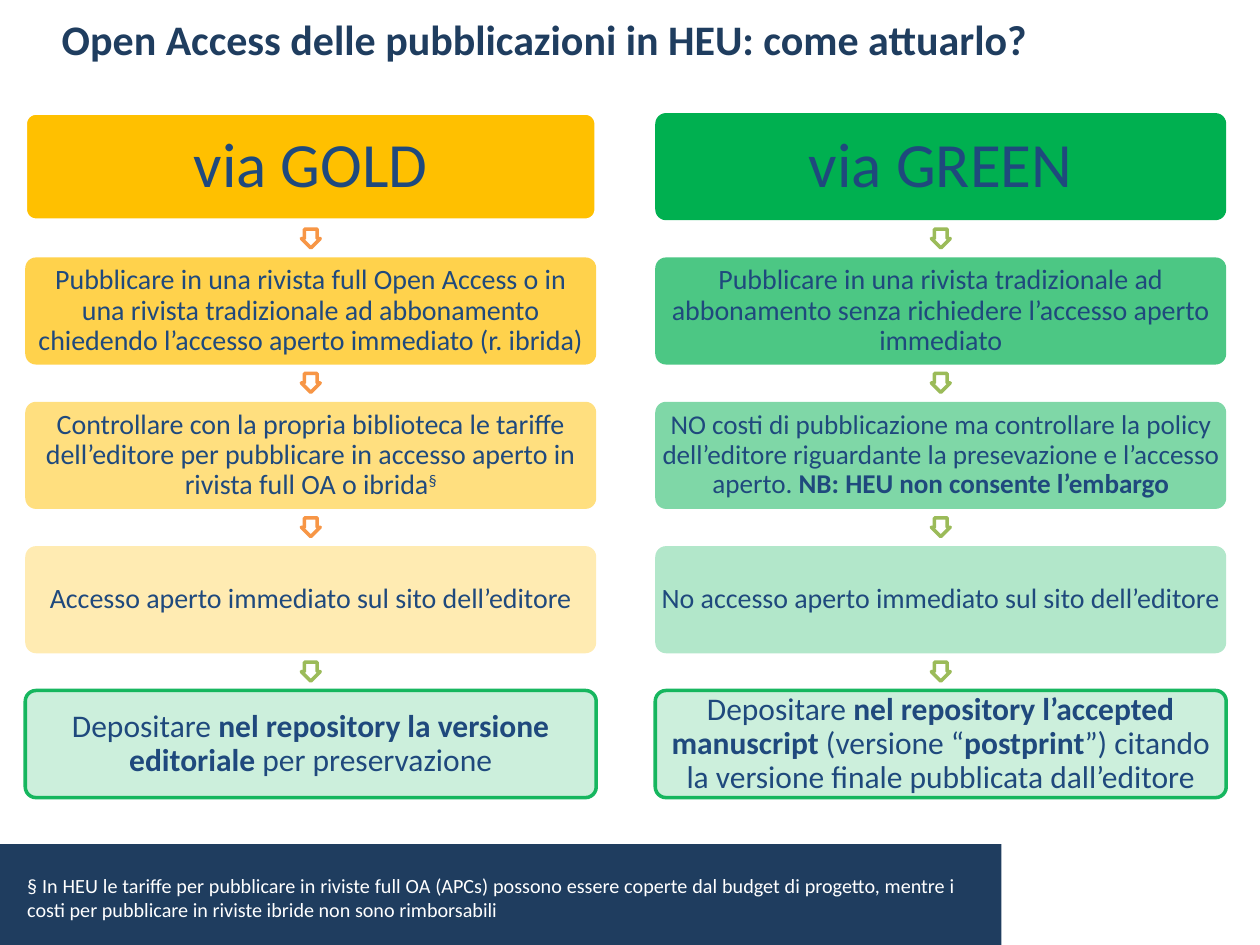
from lxml.etree import SubElement
from pptx import Presentation
from pptx.dml.color import RGBColor
from pptx.enum.shapes import MSO_SHAPE
from pptx.enum.text import MSO_ANCHOR, MSO_AUTO_SIZE, PP_ALIGN
from pptx.oxml.ns import qn
from pptx.util import Cm, Pt

HUES = {"navy": "1F3D5F", "ink": "1F497D", "gold": "FFC000", "green": "00B050",
        "orange": "F79646", "olive": "9BBB59", "white": "FFFFFF"}
TOP, WIDE, HIGH, STEP = 2.28, 11.51, 2.16, 2.91
TIP, DROP = 0.38, 2.34
FADES = [100, 70, 50, 30, 20]
SIDES = ("margin_left", "margin_right", "margin_top", "margin_bottom")

PATHS = [
    {"left": 0.51, "hue": "gold", "edge": "white",
     "tips": ["orange", "orange", "orange", "olive"],
     "steps": [
         (36, [("via GOLD", {})]),
         (16, [("Pubblicare in una rivista full Open Access o in una rivista tradizionale "
                "ad abbonamento chiedendo l’accesso aperto immediato (r. ibrida)", {})]),
         (16, [("Controllare con la propria biblioteca le tariffe dell’editore per "
                "pubblicare in accesso aperto in rivista full OA o ibrida", {}),
               ("§", {"raise": "30000"})]),
         (16, [("Accesso aperto immediato sul sito dell’editore", {})]),
         (18, [("Depositare ", {}),
               ("nel repository la versione editoriale ", {"bold": True}),
               ("per preservazione", {})])]},
    {"left": 13.21, "hue": "green", "edge": None,
     "tips": ["olive"] * 4,
     "steps": [
         (36, [("via GREEN", {})]),
         (16, [("Pubblicare in una rivista tradizionale ad abbonamento senza richiedere "
                "l’accesso aperto immediato", {})]),
         (15.5, [("NO costi di pubblicazione ma controllare la policy dell’editore "
                  "riguardante la presevazione e l’accesso aperto. ", {}),
                 ("NB: HEU non consente l’embargo", {"bold": True})]),
         (16, [("No accesso aperto immediato sul sito dell’editore", {})]),
         (18, [("Depositare ", {}),
               ("nel repository l’accepted manuscript ", {"bold": True}),
               ("(versione “", {}), ("postprint", {"bold": True}),
               ("”) citando la versione finale pubblicata dall’editore", {})])]},
]


def put(item, values):
    for name, value in values.items():
        setattr(item, name, value)


def tint(fill, hue, fade=100):
    fill.solid()
    fill.fore_color.rgb = RGBColor.from_string(HUES[hue])
    if fade < 100:
        color = next(fill._xPr.iter(qn("a:srgbClr")))
        SubElement(color, qn("a:alpha")).set("val", str(fade * 1000))


def trim(shape, hue=None, fade=100):
    if hue is None:
        shape.line.fill.background()
        return
    tint(shape.line.fill, hue, fade)
    shape.line.width = Pt(2)


def draw(slide, kind, area, hue, fade=100):
    shape = slide.shapes.add_shape(kind, *map(Cm, area))
    shape.shadow.inherit = False
    tint(shape.fill, hue, fade)
    return shape


def fill_text(frame, runs, size, hue, look, bold=False):
    para = frame.paragraphs[0]
    put(para, look)
    for text, style in runs:
        run = para.add_run()
        run.text = text
        put(run.font, {"name": "Calibri", "size": Pt(size),
                       "bold": style.get("bold", bold)})
        run.font.color.rgb = RGBColor.from_string(HUES[hue])
        if "raise" in style:
            run.font._element.set("baseline", style["raise"])


def add_title(slide):
    title = slide.shapes.title
    put(title, {"left": Cm(0.99), "top": Cm(0), "width": Cm(23.39), "height": Cm(1.8)})
    put(title.text_frame, {"word_wrap": True, "auto_size": MSO_AUTO_SIZE.NONE,
                           "vertical_anchor": MSO_ANCHOR.MIDDLE})
    runs = [("Open Access delle pubblicazioni in HEU: come attuarlo?", {})]
    fill_text(title.text_frame, runs, 24, "navy",
              {"alignment": PP_ALIGN.LEFT, "line_spacing": Pt(22)}, True)


def add_step(slide, left, top, hue, fade, size, runs):
    box = draw(slide, MSO_SHAPE.ROUNDED_RECTANGLE, (left, top, WIDE, HIGH), hue, fade)
    box.adjustments[0] = 0.1
    frame = box.text_frame
    put(frame, {"word_wrap": True, "vertical_anchor": MSO_ANCHOR.MIDDLE})
    put(frame, dict.fromkeys(SIDES, Cm(0.06)))
    fill_text(frame, runs, size, "ink",
              {"alignment": PP_ALIGN.CENTER, "line_spacing": 0.9})
    return box


def add_tip(slide, left, top, hue):
    area = (left + (WIDE - TIP) / 2, top + DROP, TIP, TIP)
    tip = draw(slide, MSO_SHAPE.RIGHT_ARROW, area, "white")
    tip.rotation = 90
    tip.adjustments[0] = 0.67
    trim(tip, hue)


def add_path(slide, path):
    left, last = path["left"], len(FADES) - 1
    for row, (fade, (size, runs)) in enumerate(zip(FADES, path["steps"])):
        top = TOP + row * STEP
        hue = "green" if row == last else path["hue"]
        box = add_step(slide, left, top, hue, fade, size, runs)
        if row == last:
            trim(box, "green", 90)
        else:
            trim(box, path["edge"] if row == 0 else None)
            add_tip(slide, left, top, path["tips"][row])


def add_note(slide):
    band = draw(slide, MSO_SHAPE.RECTANGLE, (0, 17.02, 20.19, 2.03), "navy")
    trim(band)
    note = slide.shapes.add_textbox(Cm(0.3), Cm(17.48), Cm(19.2), Cm(1.24))
    note.text_frame.word_wrap = True
    runs = [("§ In HEU le tariffe per pubblicare in riviste full OA (APCs) possono essere "
             "coperte dal budget di progetto, mentre i costi per pubblicare in riviste "
             "ibride non sono rimborsabili", {})]
    fill_text(note.text_frame, runs, 11.5, "white", {"alignment": PP_ALIGN.JUSTIFY})


def main():
    deck = Presentation()
    put(deck, {"slide_width": Cm(25.4), "slide_height": Cm(19.05)})
    slide = deck.slides.add_slide(deck.slide_layouts[5])
    add_title(slide)
    for path in PATHS:
        add_path(slide, path)
    add_note(slide)
    deck.save("out.pptx")


if __name__ == "__main__":
    main()
